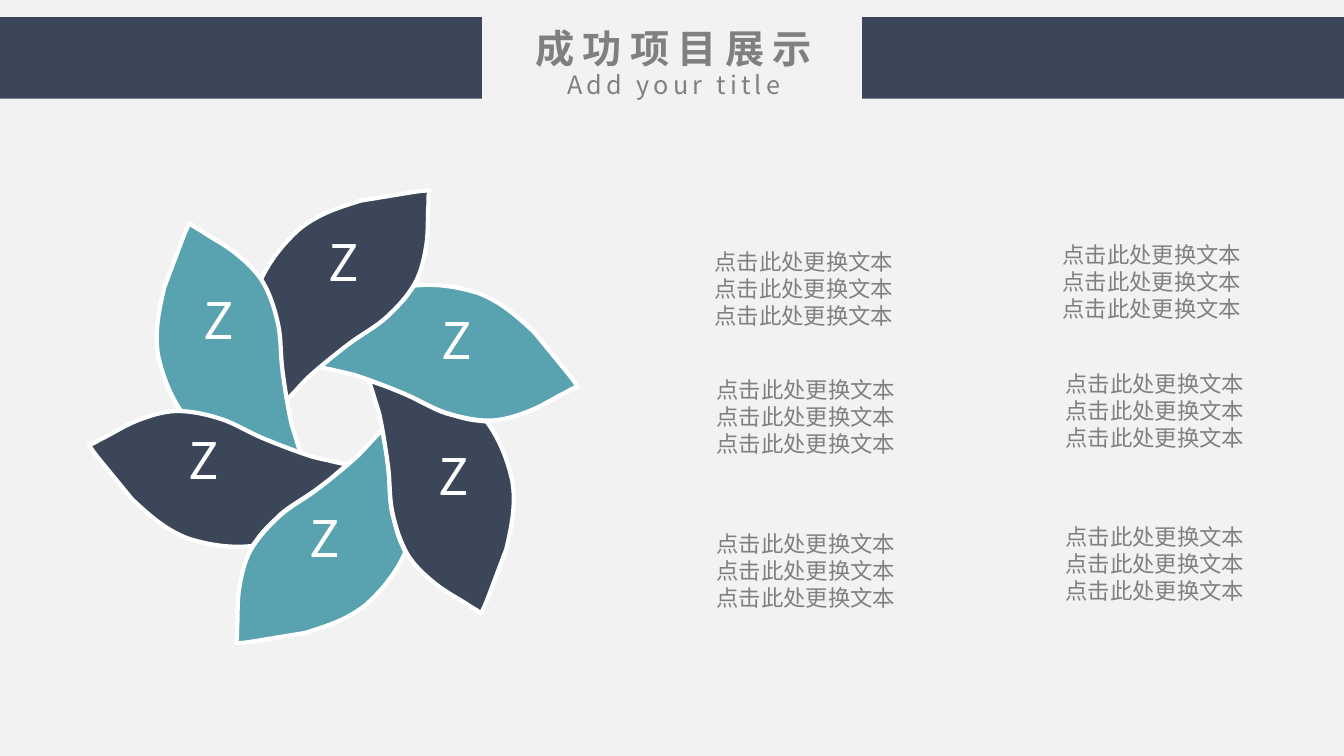
import pptx
import pptx.util
import pptx.dml.color
import pptx.enum.shapes
import pptx.enum.text
import pptx.oxml.ns

Inches = pptx.util.Inches
ALIGN = pptx.enum.text.PP_ALIGN
NAVY, TEAL, GRAY, WHITE, PAPER = "3B4658", "59A3B0", "808080", "FFFFFF", "F2F2F2"

PETAL_START = (4.26, 1.89)
PETAL_SEGMENTS = [
    [(4.25, 1.93), (4.25, 1.93), (4.25, 2.02)],
    [(4.24, 2.11), (4.25, 2.29), (4.23, 2.42)],
    [(4.21, 2.55), (4.18, 2.7), (4.11, 2.82)],
    [(4.04, 2.94), (3.94, 3.05), (3.83, 3.15)],
    [(3.72, 3.25), (3.58, 3.32), (3.45, 3.42)],
    [(3.32, 3.52), (3.17, 3.64), (3.05, 3.75)],
    [(2.99, 3.81), (2.94, 3.87), (2.89, 3.92)],
    [(2.81, 4.01)],
    [(2.79, 3.9)],
    [(2.77, 3.81), (2.76, 3.72), (2.75, 3.64)],
    [(2.73, 3.47), (2.74, 3.32), (2.71, 3.18)],
    [(2.68, 3.07), (2.66, 2.96), (2.61, 2.86)],
    [(2.58, 2.79)],
    [(2.62, 2.71)],
    [(2.71, 2.54), (2.83, 2.4), (2.96, 2.28)],
    [(3.14, 2.13), (3.35, 2.06), (3.58, 1.99)],
    [(4.07, 1.91)],
    [(4.19, 1.89), (4.22, 1.89), (4.26, 1.89)],
]

PETALS = [
    (180, (3.18, 5.32), TEAL, (2.89, 4.98)),
    (120, (4.27, 4.83), NAVY, (4.17, 4.37)),
    (60, (4.39, 3.64), TEAL, (4.2, 3.02)),
    (0, (3.42, 2.95), NAVY, (3.08, 2.24)),
    (300, (2.38, 3.47), TEAL, (1.84, 2.82)),
    (240, (2.22, 4.61), NAVY, (1.69, 4.21)),
]

CAPTION_PLACES = [
    (5.56, 2.43), (5.58, 3.7), (5.58, 5.23),
    (9.01, 2.36), (9.04, 3.64), (9.04, 5.16),
]


def color(code):
    return pptx.dml.color.RGBColor.from_string(code)


class SlideBuilder:
    font_name = "Noto Sans CJK SC"
    outline_width = pptx.util.Pt(3)

    def __init__(self, slide):
        self.slide = slide
        slide.background.fill.solid()
        slide.background.fill.fore_color.rgb = color(PAPER)

    def paint(self, shape, fill):
        shape.shadow.inherit = False
        shape.fill.solid()
        shape.fill.fore_color.rgb = color(fill)

    def band(self, left, top, width, height):
        band = self.slide.shapes.add_shape(
            pptx.enum.shapes.MSO_SHAPE.RECTANGLE, *map(Inches, (left, top, width, height)))
        self.paint(band, NAVY)
        band.line.fill.background()

    def petal(self, angle, center, fill):
        start = [Inches(value) for value in PETAL_START]
        builder = self.slide.shapes.build_freeform(*start, scale=1.0)
        builder.add_line_segments(
            [(Inches(x), Inches(y)) for segment in PETAL_SEGMENTS for x, y in segment], close=True)
        petal = builder.convert_to_shape()
        steps = iter(list(petal.element.iter(pptx.oxml.ns.qn("a:lnTo"))))
        for segment in PETAL_SEGMENTS:
            first, *others = [next(steps) for point in segment]
            if others:
                first.tag = pptx.oxml.ns.qn("a:cubicBezTo")
            for step in others:
                first.append(step[0])
                step.getparent().remove(step)
        petal.left = Inches(center[0]) - petal.width // 2
        petal.top = Inches(center[1]) - petal.height // 2
        petal.rotation = angle
        self.paint(petal, fill)
        petal.line.color.rgb = color(WHITE)
        petal.line.width = self.outline_width

    def text(self, place, lines, size, ink=GRAY, bold=False, align=ALIGN.CENTER,
             spacing=0, frame_format=None):
        frame = self.slide.shapes.add_textbox(*map(Inches, place)).text_frame
        settings = {"word_wrap": True,
                    "auto_size": pptx.enum.text.MSO_AUTO_SIZE.SHAPE_TO_FIT_TEXT,
                    **(frame_format or {})}
        for name, value in settings.items():
            setattr(frame, name, value)
        frame.text = "\n".join(lines)
        for paragraph in frame.paragraphs:
            paragraph.alignment = align
            font = paragraph.runs[0].font
            font_format = {"name": self.font_name, "size": pptx.util.Pt(size), "bold": bold}
            for name, value in font_format.items():
                setattr(font, name, value)
            font.color.rgb = color(ink)
            properties = paragraph.runs[0]._r.get_or_add_rPr()
            east_asian = pptx.oxml.parse_xml(
                f'<a:ea {pptx.oxml.ns.nsdecls("a")} typeface="{self.font_name}"/>')
            properties.find(pptx.oxml.ns.qn("a:latin")).addnext(east_asian)
            if spacing:
                properties.set("spc", str(spacing * 100))


def main():
    deck = pptx.Presentation()
    deck.slide_width, deck.slide_height = Inches(13.33), Inches(7.5)
    page = SlideBuilder(deck.slides.add_slide(deck.slide_layouts[6]))

    for band_left in (0, 8.55):
        page.band(band_left, 0.17, 4.78, 0.81)
    page.text((5.14, 0.19, 3.08, 0.57), ["成功项目展示"], 28, bold=True, spacing=6)
    page.text((5.35, 0.64, 2.67, 0.4), ["Add your title"], 18, spacing=3)

    for angle, center, fill, label_place in PETALS:
        page.petal(angle, center, fill)
    for angle, center, fill, label_place in PETALS:
        page.text((*label_place, 0.66, 0.91), ["Z"], 36, WHITE,
                  frame_format={"word_wrap": False})

    caption_format = {"margin_left": Inches(0.05), "margin_right": Inches(0.05),
                      "margin_top": Inches(0.03), "margin_bottom": Inches(0.03)}
    for caption_place in CAPTION_PLACES:
        page.text((*caption_place, 3.35, 0.86), ["点击此处更换文本"] * 3, 16,
                  align=ALIGN.RIGHT, frame_format=caption_format)

    deck.save("out.pptx")


if __name__ == "__main__":
    main()
